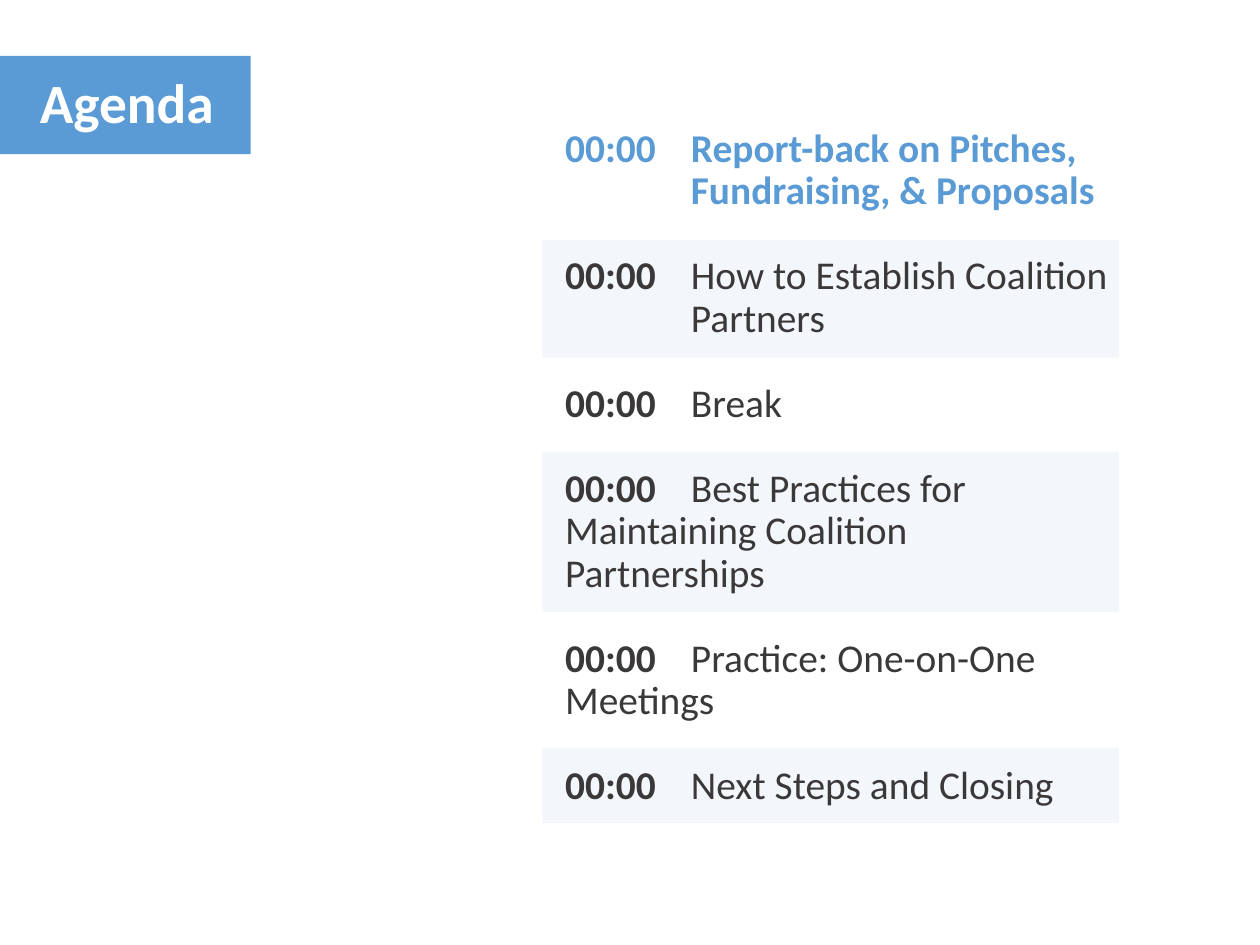
from lxml.etree import SubElement
from pptx import Presentation
from pptx.dml.color import RGBColor
from pptx.enum.shapes import MSO_SHAPE as SHAPE
from pptx.enum.text import MSO_ANCHOR as ANCHOR, MSO_AUTO_SIZE as AUTO, PP_ALIGN as ALIGN
from pptx.oxml.ns import qn
from pptx.util import Pt

PX = 9144
BLUE = RGBColor(0x5B, 0x9B, 0xD5)
DARK = RGBColor(0x3A, 0x38, 0x38)
WHITE = RGBColor(0xFF, 0xFF, 0xFF)
TIME_WIDTH = 142
BARS = [(131, 133), (370, 181), (704, 85)]
AGENDA = [
    ("00:00", "Report-back on Pitches, Fundraising, & Proposals", BLUE, True, True),
    ("00:00", "How to Establish Coalition Partners", DARK, False, True),
    ("00:00", "Break", DARK, False, False),
    ("00:00", "Best Practices for Maintaining Coalition\vPartnerships", DARK, False, False),
    ("00:00", "Practice: One-on-One Meetings", DARK, False, False),
    ("00:00", "Next Steps and Closing", DARK, False, False),
]


def px(*lengths):
    """Turn px lengths into EMU."""
    return [n * PX for n in lengths]


def add_text(p, text, size=32, color=DARK, bold=False):
    """Append formatted text to a paragraph, with \\v as a line break."""
    for i, line in enumerate(text.split("\v")):
        if i:
            p.add_line_break()
        r = p.add_run()
        r.text = line
        r.font.name = "Calibri"
        r.font.size = Pt(size)
        r.font.bold = bold
        r.font.color.rgb = color


def set_frame(tf, left, top, right, bottom):
    """Give a text frame wrapping, top anchoring and px insets."""
    tf.word_wrap = True
    tf.auto_size = AUTO.NONE
    tf.vertical_anchor = ANCHOR.TOP
    tf.margin_left, tf.margin_top, tf.margin_right, tf.margin_bottom = px(
        left, top, right, bottom)


def set_time_column(p, hanging):
    """Align the text after the time by a hanging indent or a tab stop."""
    pPr = p._p.get_or_add_pPr()
    width = str(TIME_WIDTH * PX)
    if hanging:
        pPr.set("marL", width)
        pPr.set("indent", "-" + width)
    else:
        tabs = SubElement(pPr, qn("a:tabLst"))
        SubElement(tabs, qn("a:tab"), pos=width, algn="l")


def add_bar(slide, x, y, w, h):
    """Draw one pale row band."""
    sp = slide.shapes.add_shape(SHAPE.RECTANGLE, *px(x, y, w, h))
    sp.shadow.inherit = False
    sp.line.fill.background()
    sp.fill.solid()
    sp.fill.fore_color.rgb = BLUE
    color = sp._element.spPr.find(qn("a:solidFill"))[0]
    SubElement(color, qn("a:alpha"), val="7000")


def add_title(slide, x, y, w, h):
    """Place the title on its blue tab."""
    sp = slide.shapes.title
    sp.left, sp.top, sp.width, sp.height = px(x, y, w, h)
    sp.fill.solid()
    sp.fill.fore_color.rgb = BLUE
    tf = sp.text_frame
    set_frame(tf, 45, 14, 10, 5)
    p = tf.paragraphs[0]
    p.alignment = ALIGN.LEFT
    add_text(p, "Agenda", size=45, color=WHITE, bold=True)


def add_agenda(slide, x, y, w, h):
    """Draw the row bands and the timed agenda over them."""
    for top, height in BARS:
        add_bar(slide, x - 16, y + top, w + 15, height)
    tf = slide.shapes.add_textbox(*px(x, y, w, h)).text_frame
    set_frame(tf, 10, 5, 10, 5)
    for i, (time, topic, color, bold, hanging) in enumerate(AGENDA):
        p = tf.add_paragraph() if i else tf.paragraphs[0]
        p.line_spacing = 0.9
        p.space_before = Pt(34.5 if i else 0)
        set_time_column(p, hanging)
        add_text(p, time + "\t", color=color, bold=True)
        add_text(p, topic, color=color, bold=bold)


def main():
    """Build the agenda slide."""
    prs = Presentation()
    prs.slide_width, prs.slide_height = px(1422, 1067)
    slide = prs.slides.add_slide(prs.slide_layouts[5])
    add_title(slide, 0, 63, 283, 111)
    add_agenda(slide, 628, 140, 636, 786)
    prs.save("out.pptx")


if __name__ == "__main__":
    main()
